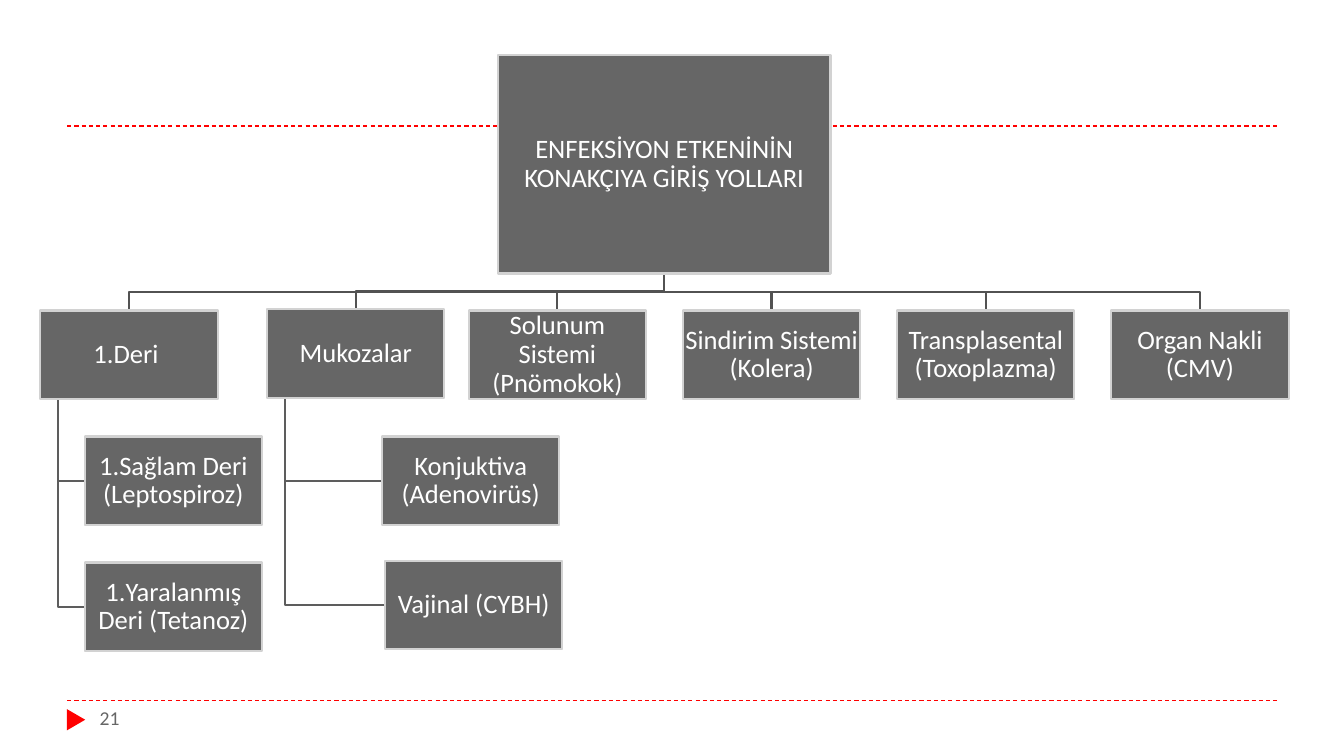
from lxml import etree
from pptx import Presentation, util as u
from pptx.dml.color import RGBColor
from pptx.enum import dml, shapes, text
from pptx.oxml.ns import qn

Pt = u.Pt
COLORS = {"box": "666666", "border": "D2D2D2", "text": "FFFFFF",
          "branch": "525252", "twig": "5D5D5D", "accent": "FF0000", "number": "666666"}
FONT = "Calibri"
PAGE_NUMBER = "21"

TITLE = "ENFEKSİYON ETKENİNİN KONAKÇIYA GİRİŞ YOLLARI"
TITLE_BOX = (355.7, 39.6, 237.6, 155.8)
BOX_W, BOX_H = 126.7, 63.4
MARGIN, STEP, ROW_TOP = 28.8, 153, 221.8
TRUNK_INSET = 12.7

ROUTES = [
    {"label": "Deri ", "numbered": True, "column": 0, "examples": [
        ("Sağlam Deri (Leptospiroz)", 60.5, 311.8),
        ("Yaralanmış Deri (Tetanoz)", 60.5, 401.8)]},
    {"label": "Mukozalar", "at": (190.8, 221), "examples": [
        ("Konjuktiva (Adenovirüs)", 272.9, 311.8),
        ("Vajinal (CYBH)", 275, 400.5)]},
    {"label": "Solunum Sistemi (Pnömokok)", "column": 2},
    {"label": "Sindirim Sistemi (Kolera)", "column": 3},
    {"label": "Transplasental (Toxoplazma)", "column": 4},
    {"label": "Organ Nakli (CMV)", "column": 5},
]

RULES = [90, 500.4]
RULE_LEFT, RULE_RIGHT = 48, 912

prs = Presentation()
prs.slide_width, prs.slide_height = Pt(960), Pt(540)
slide = prs.slides.add_slide(prs.slide_layouts[6])


def color(name):
    return RGBColor.from_string(COLORS[name])


def style_line(line, name, width):
    line.color.rgb = color(name)
    line.width = Pt(width)


def style_font(paragraph, size, name):
    font = paragraph.font
    font.name, font.size = FONT, Pt(size)
    font.color.rgb = color(name)


def add_rule(y):
    rule = slide.shapes.add_connector(shapes.MSO_CONNECTOR.STRAIGHT,
                                      Pt(RULE_LEFT), Pt(y), Pt(RULE_RIGHT), Pt(y))
    style_line(rule.line, "accent", 0.75)
    rule.line.dash_style = dml.MSO_LINE.DASH
    etree.SubElement(rule._element.spPr, qn("a:effectLst"))


def add_elbow(points, name):
    start, *rest = [(Pt(x), Pt(y)) for x, y in points]
    builder = slide.shapes.build_freeform(*start)
    builder.add_line_segments(rest, close=False)
    elbow = builder.convert_to_shape()
    elbow.fill.background()
    elbow.shadow.inherit = False
    style_line(elbow.line, name, 1.5)


def add_box(label, left, top, width=BOX_W, height=BOX_H, numbered=False):
    box = slide.shapes.add_shape(shapes.MSO_SHAPE.RECTANGLE,
                                 Pt(left), Pt(top), Pt(width), Pt(height))
    box.shadow.inherit = False
    box.fill.solid()
    box.fill.fore_color.rgb = color("box")
    style_line(box.line, "border", 1.5)
    frame = box.text_frame
    frame.word_wrap = True
    frame.vertical_anchor = text.MSO_ANCHOR.MIDDLE
    frame.margin_left = frame.margin_right = Pt(0.9)
    frame.margin_top = frame.margin_bottom = Pt(0.9)
    paragraph = frame.paragraphs[0]
    paragraph.text = label
    paragraph.alignment = text.PP_ALIGN.CENTER
    paragraph.line_spacing = 0.9
    style_font(paragraph, 19, "text")
    if numbered:
        props = paragraph._p.get_or_add_pPr()
        props.set("marL", "0")
        props.set("indent", "0")
        numbering = etree.Element(qn("a:buAutoNum"), type="arabicPeriod")
        props.find(qn("a:defRPr")).addprevious(numbering)


for rule_y in RULES:
    add_rule(rule_y)

marker = slide.shapes.add_shape(shapes.MSO_SHAPE.ISOSCELES_TRIANGLE,
                                Pt(46.8), Pt(507.6), Pt(15.1), Pt(13))
marker.rotation = 90
marker.shadow.inherit = False
marker.fill.solid()
marker.fill.fore_color.rgb = color("accent")
marker.line.fill.background()

title_left, title_top, title_w, title_h = TITLE_BOX
title_x, title_bottom = title_left + title_w / 2, title_top + title_h
boxes = [(TITLE, *TITLE_BOX)]

for route in ROUTES:
    left, top = route.get("at") or (MARGIN + STEP * route["column"], ROW_TOP)
    numbered = route.get("numbered", False)
    boxes.append((route["label"], left, top, BOX_W, BOX_H, numbered))
    center, middle = left + BOX_W / 2, (title_bottom + top) / 2
    add_elbow([(title_x, title_bottom), (title_x, middle),
               (center, middle), (center, top)], "branch")
    trunk = left + TRUNK_INSET
    for example, example_left, example_top in route.get("examples", []):
        boxes.append((example, example_left, example_top, BOX_W, BOX_H, numbered))
        level = example_top + BOX_H / 2
        add_elbow([(trunk, top + BOX_H), (trunk, level), (example_left, level)], "twig")

for box_details in boxes:
    add_box(*box_details)

number = slide.shapes.add_textbox(Pt(64.1), Pt(500.4), Pt(208), Pt(28.8)).text_frame
number.word_wrap = True
number.text = PAGE_NUMBER
style_font(number.paragraphs[0], 14, "number")

prs.save("out.pptx")
